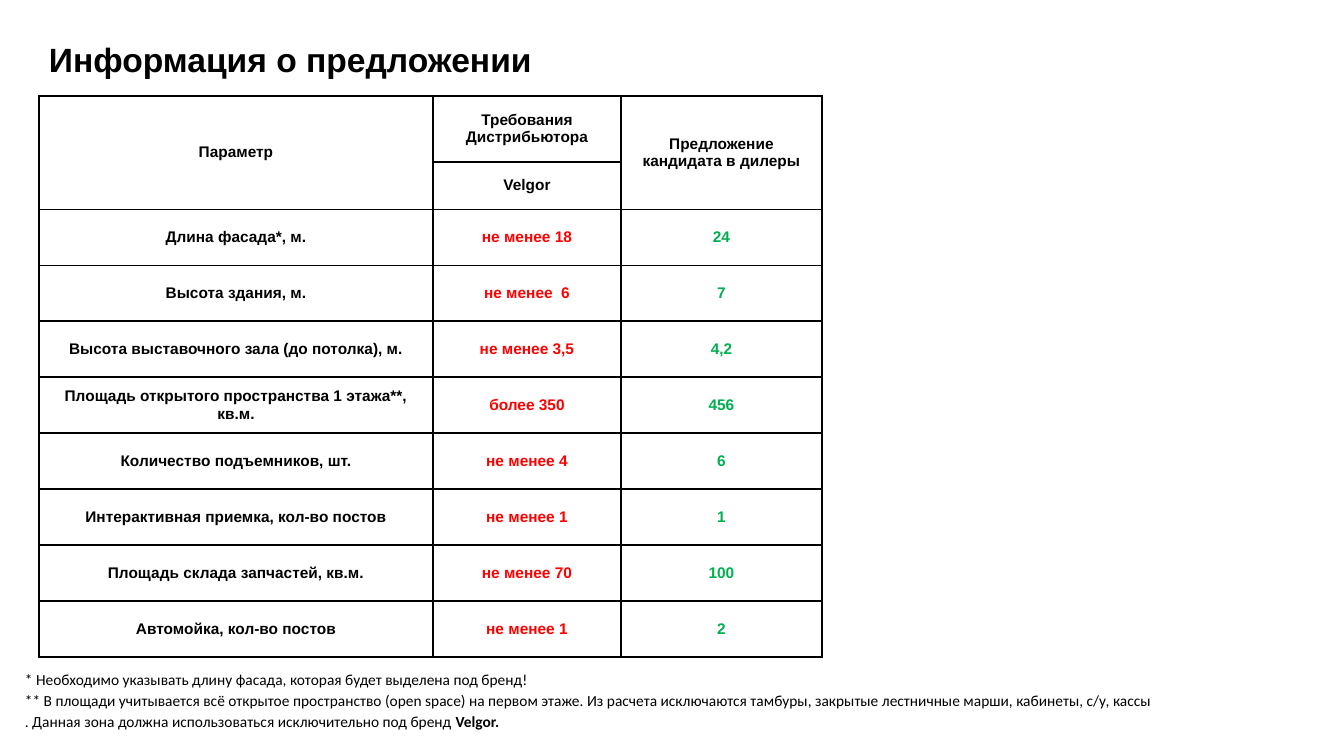
"""Build the dealer offer slide with its requirements table and footnotes."""
from dataclasses import dataclass
from typing import Any

from lxml.etree import SubElement
from pptx import Presentation
from pptx.dml.color import RGBColor
from pptx.enum.text import MSO_ANCHOR as Anchor, PP_ALIGN as Align
from pptx.oxml.ns import qn
from pptx.util import Pt

EMU_PER_PX = 914400 / 100.8
SLIDE_WIDTH, SLIDE_HEIGHT = 1344, 756
BLACK = RGBColor(0x00, 0x00, 0x00)
RED = RGBColor(0xFF, 0x00, 0x00)
GREEN = RGBColor(0x00, 0xB0, 0x50)

TABLE_LEFT, TABLE_TOP = 39, 96
COLUMN_WIDTHS = (394, 188, 201)
HEADER_HEIGHTS = (66, 47)
PARAMETER_HEIGHT = 56


@dataclass(frozen=True)
class Parameter:
    """A parameter with its requirement and the candidate's offer."""
    name: str
    requirement: str
    offer: str


@dataclass(frozen=True)
class Run:
    """A stretch of footnote text."""
    text: str
    bold: bool = False


PARAMETERS = (
    Parameter("Длина фасада*, м.", "не менее 18", "24"),
    Parameter("Высота здания, м.", "не менее  6", "7"),
    Parameter("Высота выставочного зала (до потолка), м.", "не менее 3,5", "4,2"),
    Parameter("Площадь открытого пространства 1 этажа**, кв.м.", "более 350", "456"),
    Parameter("Количество подъемников, шт.", "не менее 4", "6"),
    Parameter("Интерактивная приемка, кол-во постов", "не менее 1", "1"),
    Parameter("Площадь склада запчастей, кв.м.", "не менее 70", "100"),
    Parameter("Автомойка, кол-во постов", "не менее 1", "2"),
)

FOOTNOTES = (
    (Run("* Необходимо указывать длину фасада, которая будет выделена под бренд!"),),
    (Run("** В площади учитывается всё открытое пространство (open space) на первом этаже. "
         "Из расчета исключаются тамбуры, закрытые лестничные марши, кабинеты, с/у, кассы"),),
    (Run(". Данная зона должна использоваться исключительно под бренд "),
     Run("Velgor.", bold=True)),
)


def px(length: int) -> int:
    """Turn pixels into EMU."""
    return round(length * EMU_PER_PX)


def add_text(paragraph: Any, text: str, *, size: int = 11, font: str = "Arial",
             color: RGBColor = BLACK, bold: bool = True) -> None:
    """Append a formatted run to a paragraph."""
    run = paragraph.add_run()
    run.text = text
    run.font.size = Pt(size)
    run.font.name = font
    run.font.bold = bold
    run.font.color.rgb = color


def add_frame(slide: Any, left: int, top: int, width: int, height: int) -> Any:
    """Add a wrapping text box and return its text frame."""
    frame = slide.shapes.add_textbox(px(left), px(top), px(width), px(height)).text_frame
    frame.word_wrap = True
    return frame


def add_borders(cell: Any) -> None:
    """Draw a black line on every side of a cell."""
    properties = cell._tc.get_or_add_tcPr()
    for side in ("lnL", "lnR", "lnT", "lnB"):
        line = SubElement(properties, qn(f"a:{side}"), w=str(Pt(1)))
        SubElement(SubElement(line, qn("a:solidFill")), qn("a:srgbClr"), val=str(BLACK))


def fill_cell(cell: Any, text: str, color: RGBColor = BLACK) -> None:
    """Write centred text into a cell."""
    cell.vertical_anchor = Anchor.MIDDLE
    paragraph = cell.text_frame.paragraphs[0]
    paragraph.alignment = Align.CENTER
    add_text(paragraph, text, color=color)


def add_title(slide: Any) -> None:
    """Add the slide heading."""
    heading = add_frame(slide, 39, 39, 1159, 80).paragraphs[0]
    heading.line_spacing = 0.9
    add_text(heading, "Информация о предложении", size=24)


def add_offer_table(slide: Any) -> None:
    """Add the table of requirements and offers."""
    heights = HEADER_HEIGHTS + (PARAMETER_HEIGHT,) * len(PARAMETERS)
    table = slide.shapes.add_table(
        len(heights), len(COLUMN_WIDTHS), px(TABLE_LEFT), px(TABLE_TOP),
        px(sum(COLUMN_WIDTHS)), px(sum(heights))).table
    table.first_row = table.horz_banding = False
    for column, width in zip(table.columns, COLUMN_WIDTHS):
        column.width = px(width)
    for row, height in zip(table.rows, heights):
        row.height = px(height)
    for cell in table.iter_cells():
        add_borders(cell)
        cell.fill.background()

    for column in (0, 2):
        table.cell(0, column).merge(table.cell(1, column))
    fill_cell(table.cell(0, 0), "Параметр")
    fill_cell(table.cell(0, 1), "Требования Дистрибьютора")
    fill_cell(table.cell(1, 1), "Velgor")
    fill_cell(table.cell(0, 2), "Предложение кандидата в дилеры")
    for row, parameter in enumerate(PARAMETERS, start=len(HEADER_HEIGHTS)):
        fill_cell(table.cell(row, 0), parameter.name)
        fill_cell(table.cell(row, 1), parameter.requirement, RED)
        fill_cell(table.cell(row, 2), parameter.offer, GREEN)


def add_footnotes(slide: Any) -> None:
    """Add the notes under the table."""
    frame = add_frame(slide, 15, 665, 1313, 72)
    for index, runs in enumerate(FOOTNOTES):
        note = frame.add_paragraph() if index else frame.paragraphs[0]
        if index:
            note.space_before = Pt(2)
        for run in runs:
            add_text(note, run.text, font="Calibri", bold=run.bold)


def main() -> None:
    """Build and save the presentation."""
    presentation = Presentation()
    presentation.slide_width = px(SLIDE_WIDTH)
    presentation.slide_height = px(SLIDE_HEIGHT)
    slide = presentation.slides.add_slide(presentation.slide_layouts[6])
    add_title(slide)
    add_offer_table(slide)
    add_footnotes(slide)
    presentation.save("out.pptx")


if __name__ == "__main__":
    main()
